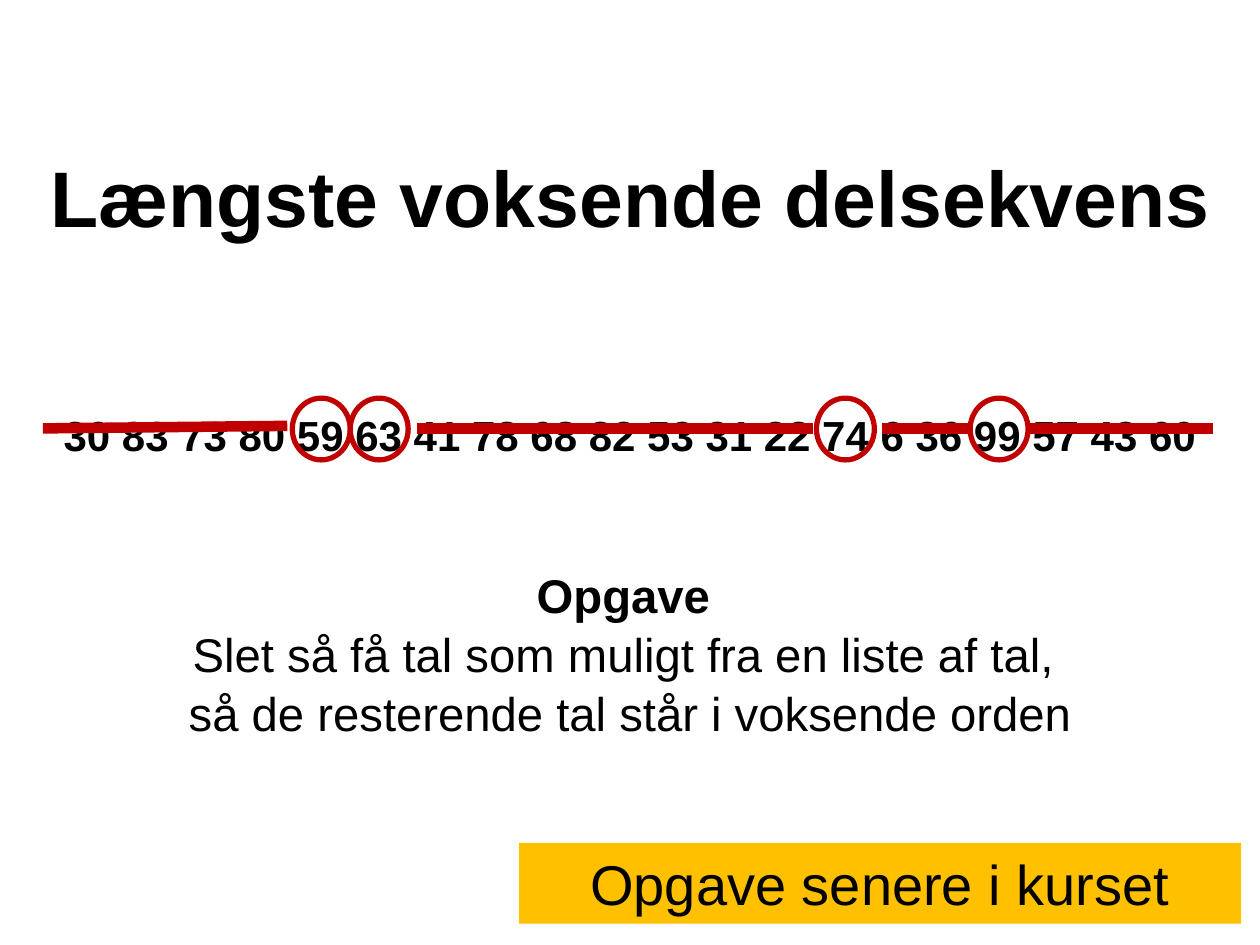
import pptx
import pptx.dml.color
import pptx.enum.shapes
import pptx.enum.text
import pptx.oxml.ns
import pptx.util
from lxml import etree
from pptx.util import Inches

COLORS = {"text": "000000", "mark": "C00000", "banner": "FFC000"}
ANCHOR = pptx.enum.text.MSO_ANCHOR
SHAPE = pptx.enum.shapes.MSO_SHAPE


def color(name):
    return pptx.dml.color.RGBColor.from_string(COLORS[name])


def write(frame, text, size, bold=False, spacing=1.0, anchor=ANCHOR.TOP, inset=(0, 0)):
    frame.word_wrap = True
    frame.auto_size = pptx.enum.text.MSO_AUTO_SIZE.NONE
    frame.vertical_anchor = anchor
    frame.margin_left = frame.margin_right = Inches(inset[0])
    frame.margin_top = frame.margin_bottom = Inches(inset[1])
    for index, line in enumerate(text.split("\n")):
        para = frame.paragraphs[0] if index == 0 else frame.add_paragraph()
        para.alignment = pptx.enum.text.PP_ALIGN.CENTER
        para.line_spacing = spacing
        para.space_before = para.space_after = pptx.util.Pt(0)
        span = para.add_run()
        span.text = line
        span.font.name = "Arial"
        span.font.size = pptx.util.Pt(size)
        span.font.bold = bold and (bold != "first" or index == 0)
        span.font.color.rgb = color("text")


def add_text(page, left, top, width, height, text, **style):
    box = page.shapes.add_textbox(Inches(left), Inches(top), Inches(width), Inches(height))
    write(box.text_frame, text, **style)


def add_title(page, left, top, width, height):
    title = page.shapes.title
    title.left, title.top = Inches(left), Inches(top)
    title.width, title.height = Inches(width), Inches(height)
    write(title.text_frame, "Længste voksende delsekvens", size=45, bold=True,
          spacing=0.9, anchor=ANCHOR.BOTTOM, inset=(0.07, 0.04))


def add_strike(page, start, end, start_y, end_y):
    strike = page.shapes.add_connector(
        pptx.enum.shapes.MSO_CONNECTOR.STRAIGHT,
        Inches(start), Inches(start_y), Inches(end), Inches(end_y))
    strike.line.color.rgb = color("mark")
    strike.line.width = pptx.util.Pt(6)
    etree.SubElement(strike._element.spPr, pptx.oxml.ns.qn("a:effectLst"))


def add_ring(page, left, top):
    ring = page.shapes.add_shape(
        SHAPE.OVAL, Inches(left), Inches(top), Inches(0.46), Inches(0.49))
    ring.shadow.inherit = False
    ring.fill.background()
    ring.line.color.rgb = color("mark")
    ring.line.width = pptx.util.Pt(3)


def add_sequence(page, left, top, width, height):
    add_text(page, left, top, width, height,
             "30 83 73 80 59 63 41 78 68 82 53 31 22 74 6 36 99 57 43 60",
             size=24, bold=True)
    middle = top + 0.15
    for start, end, rise in [(0.34, 2.28, 0.02), (3.31, 6.45, 0),
                             (7, 7.68, 0), (8.17, 9.63, 0)]:
        add_strike(page, left + start, left + end, middle, middle - rise)
    for offset in (2.32, 2.78, 6.48, 7.7):
        add_ring(page, left + offset, top - 0.09)


def add_task(page, left, top, width, height):
    add_text(page, left, top, width, height,
             "Opgave \nSlet så få tal som muligt fra en liste af tal, \n"
             "så de resterende tal står i voksende orden",
             size=27, bold="first", spacing=1.04)


def add_banner(page, left, top, width, height):
    banner = page.shapes.add_shape(
        SHAPE.RECTANGLE, Inches(left), Inches(top), Inches(width), Inches(height))
    banner.shadow.inherit = False
    banner.fill.solid()
    banner.fill.fore_color.rgb = color("banner")
    banner.line.fill.background()
    write(banner.text_frame, "Opgave senere i kurset", size=32,
          anchor=ANCHOR.MIDDLE, inset=(0.1, 0.05))


def main():
    deck = pptx.Presentation()
    deck.slide_width, deck.slide_height = Inches(10), Inches(7.5)
    page = deck.slides.add_slide(deck.slide_layouts.get_by_name("Title Only"))
    add_title(page, 0, 0.79, 10, 1.19)
    add_sequence(page, 0, 3.25, 10, 0.4)
    add_task(page, 0, 4.48, 10, 1.4)
    add_banner(page, 4.12, 6.69, 5.73, 0.64)
    deck.save("out.pptx")


if __name__ == "__main__":
    main()
